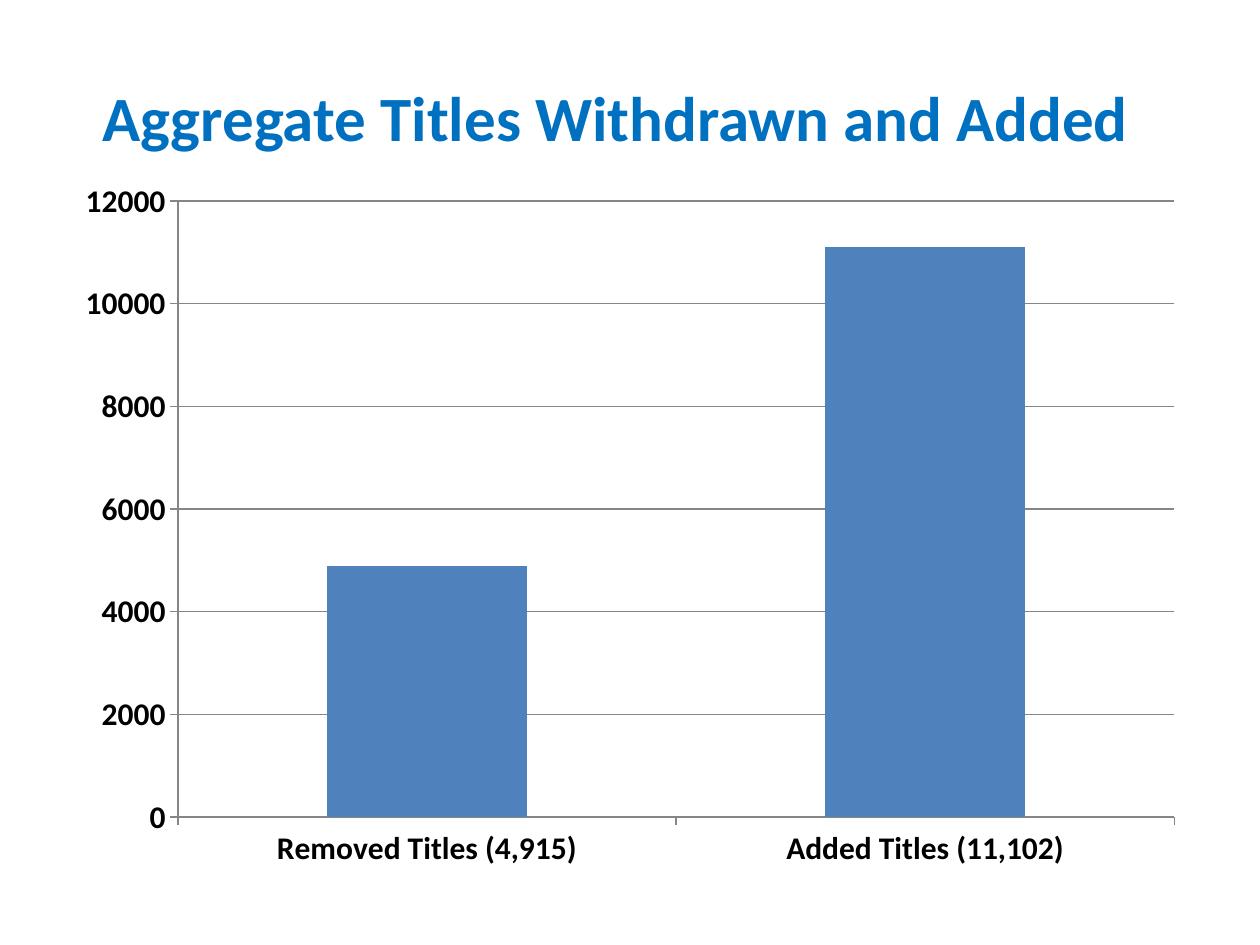
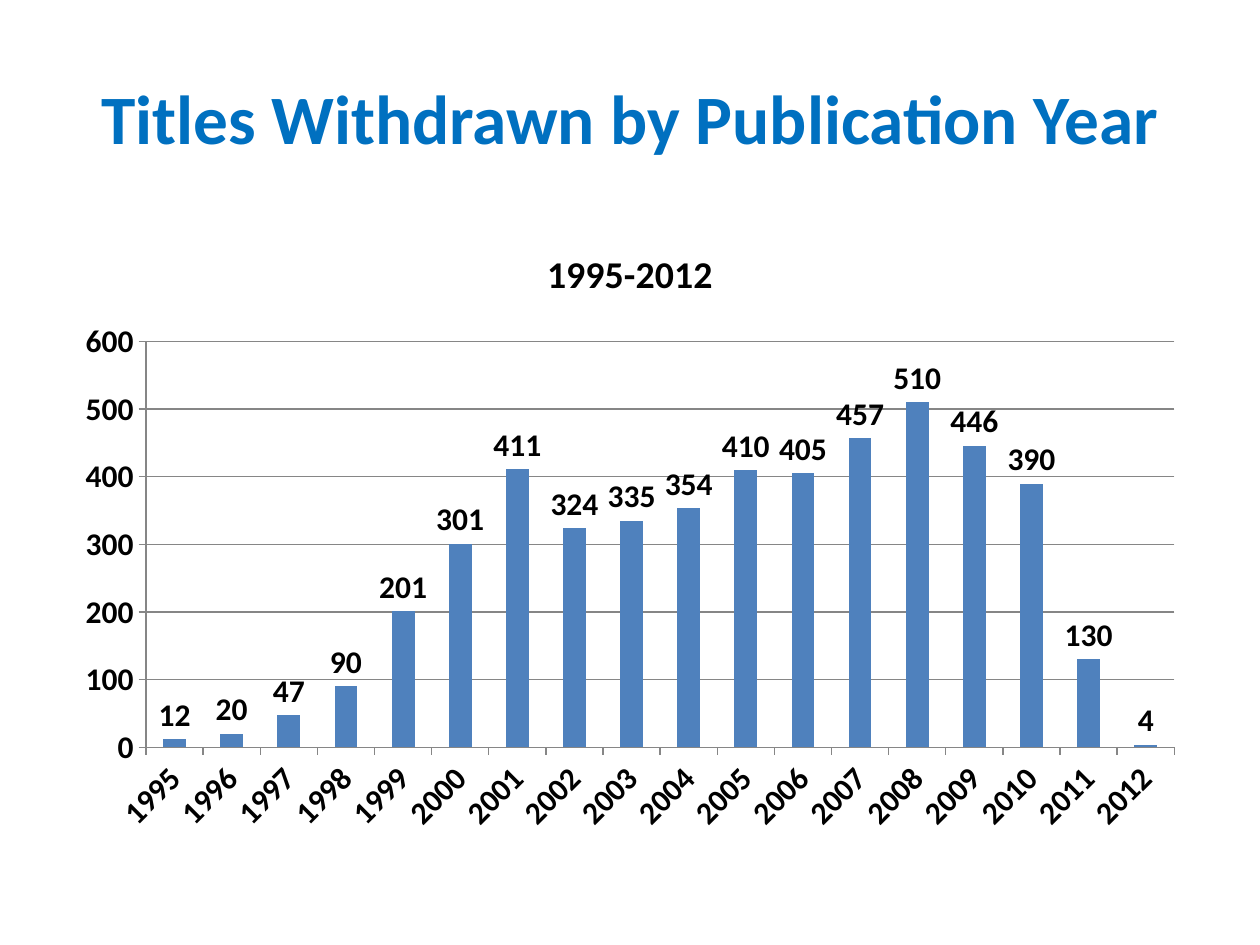
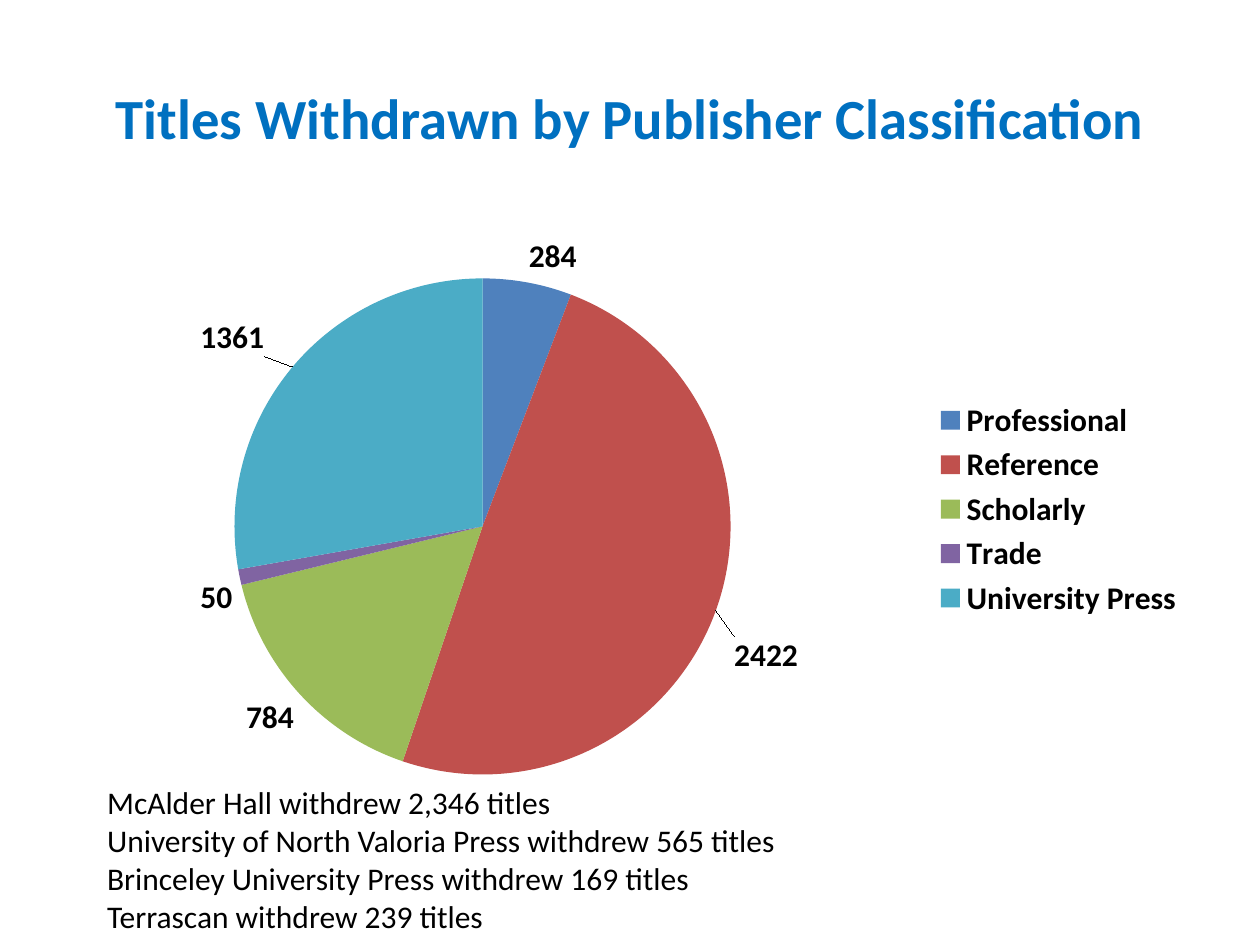
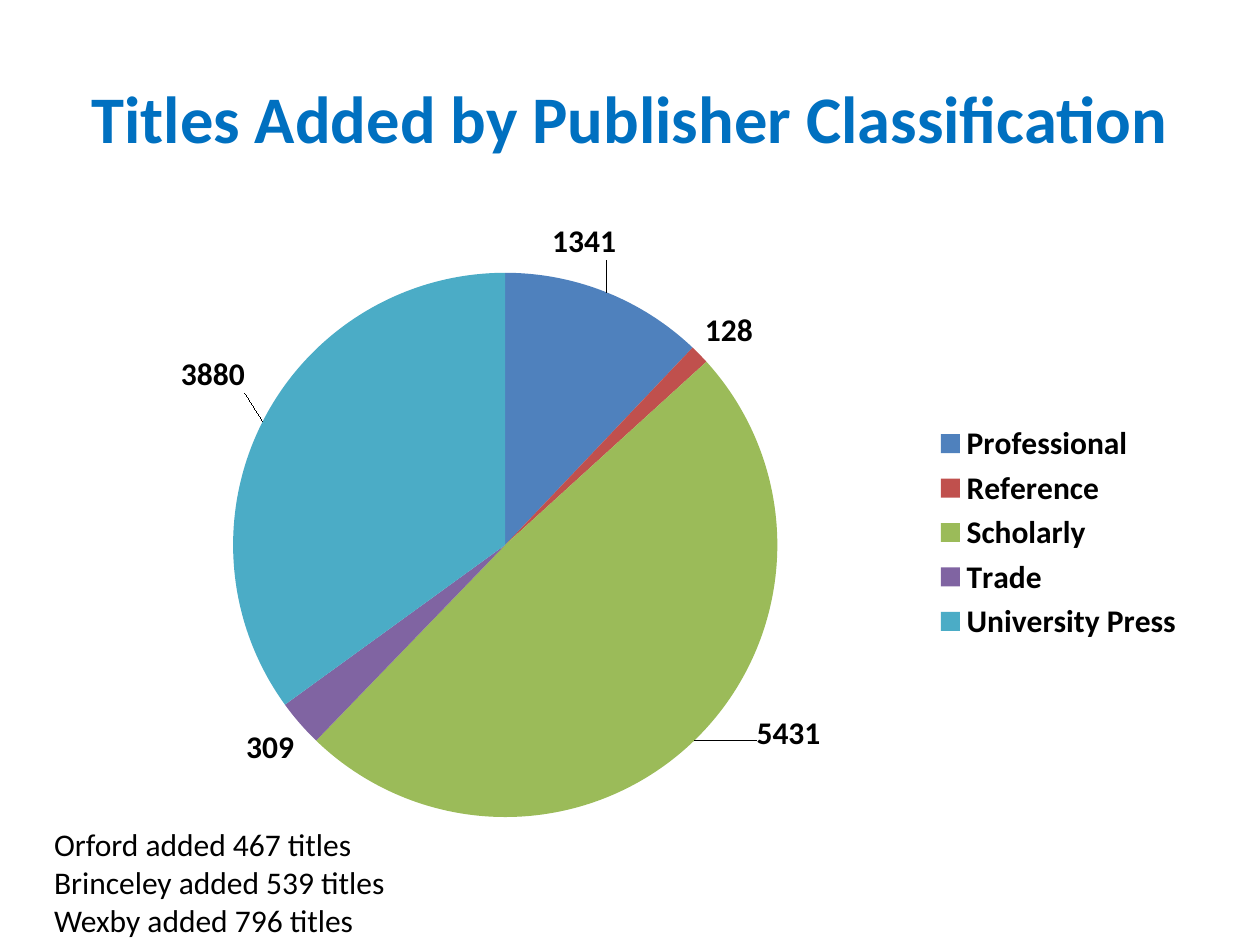
import pptx
import pptx.chart.data
import pptx.dml.color
import pptx.enum.chart
import pptx.enum.text
import pptx.oxml
import pptx.oxml.ns
import pptx.util
from pptx.util import Cm

FONT = "Calibri"
BLACK, TITLE_BLUE, AXIS_GRAY = "000000", "0070C0", "868686"
ACCENTS = ["4F81BD", "C0504D", "9BBB59", "8064A2", "4BACC6"]
MARGIN, CONTENT_WIDTH = 1.27, 22.86
BODY_SIZE = 18

CLASSIFICATIONS = ["Professional", "Reference", "Scholarly", "Trade", "University Press"]
YEARS = [str(year) for year in range(1995, 2013)]
WITHDRAWN_BY_YEAR = [12, 20, 47, 90, 201, 301, 411, 324, 335, 354,
                     410, 405, 457, 510, 446, 390, 130, 4]

CHART_TYPES = pptx.enum.chart.XL_CHART_TYPE
LABEL_POSITIONS = pptx.enum.chart.XL_LABEL_POSITION


def rgb(color):
    return pptx.dml.color.RGBColor.from_string(color)


def style_font(font, size=BODY_SIZE, color=BLACK, bold=True):
    font.name = FONT
    font.size = pptx.util.Pt(size)
    font.bold = bold
    font.color.rgb = rgb(color)


# Text
def add_text(slide, box, lines, size=BODY_SIZE, color=BLACK, bold=False):
    shape = slide.shapes.add_textbox(*(Cm(length) for length in box))
    frame = shape.text_frame
    frame.word_wrap = True
    for index, line in enumerate(lines):
        paragraph = frame.paragraphs[0] if index == 0 else frame.add_paragraph()
        run = paragraph.add_run()
        run.text = line
        style_font(run.font, size, color, bold)
    return frame


def add_title(slide, text, size, right_inset=0.25):
    box = (MARGIN, 0.76, CONTENT_WIDTH, 3.18)
    frame = add_text(slide, box, [text], size, TITLE_BLUE, True)
    frame.vertical_anchor = pptx.enum.text.MSO_ANCHOR.MIDDLE
    frame.margin_right = Cm(right_inset)
    frame.paragraphs[0].alignment = pptx.enum.text.PP_ALIGN.CENTER


# Charts
def add_chart(slide, chart_type, top, height, categories, values):
    data = pptx.chart.data.CategoryChartData()
    data.categories = categories
    data.add_series("Series 1", values)
    chart = slide.shapes.add_chart(
        chart_type, Cm(MARGIN), Cm(top), Cm(CONTENT_WIDTH), Cm(height), data).chart
    style_font(chart.font, bold=False)
    chart.has_title = False
    chart.has_legend = False
    return chart


def show_values(series, position):
    labels = series.data_labels
    labels.show_value = True
    labels.position = position
    style_font(labels.font)


def style_line(line):
    line.color.rgb = rgb(AXIS_GRAY)
    line.width = pptx.util.Pt(0.75)


def add_column_chart(slide, chart_type, top, height, categories, values):
    chart = add_chart(slide, chart_type, top, height, categories, values)
    plot = chart.plots[0]
    plot.gap_width = 150
    plot.vary_by_categories = False
    fill = plot.series[0].format.fill
    fill.solid()
    fill.fore_color.rgb = rgb(ACCENTS[0])
    for axis in (chart.category_axis, chart.value_axis):
        style_font(axis.tick_labels.font)
        axis.major_tick_mark = pptx.enum.chart.XL_TICK_MARK.OUTSIDE
        style_line(axis.format.line)
    chart.value_axis.has_major_gridlines = True
    style_line(chart.value_axis.major_gridlines.format.line)
    return chart


def make_layout(x, y, width=None, height=None):
    """Manual layout in fractions of the chart; without a size it is an offset."""
    settings = [("x", x), ("y", y)]
    if width is not None:
        settings = [("layoutTarget", "inner"), ("xMode", "edge"), ("yMode", "edge"),
                    *settings, ("w", width), ("h", height)]
    items = "".join(f'<c:{name} val="{value}"/>' for name, value in settings)
    return pptx.oxml.parse_xml(
        f'<c:layout {pptx.oxml.ns.nsdecls("c")}><c:manualLayout>{items}'
        '</c:manualLayout></c:layout>')


def add_pie_chart(slide, top, height, values, plot_box, label_offsets):
    chart = add_chart(slide, CHART_TYPES.PIE, top, height, CLASSIFICATIONS, values)
    chart.has_legend = True
    chart.legend.position = pptx.enum.chart.XL_LEGEND_POSITION.RIGHT
    chart.legend.include_in_layout = False
    style_font(chart.legend.font)

    plot = chart.plots[0]
    plot.vary_by_categories = True
    series = plot.series[0]
    for index, color in enumerate(ACCENTS):
        fill = series.points[index].format.fill
        fill.solid()
        fill.fore_color.rgb = rgb(color)

    # Plot position and shifted labels
    plot_area = chart.element.find(".//" + pptx.oxml.ns.qn("c:plotArea"))
    for layout in plot_area.findall(pptx.oxml.ns.qn("c:layout")):
        plot_area.remove(layout)
    plot_area.insert(0, make_layout(*plot_box))
    show_values(series, LABEL_POSITIONS.OUTSIDE_END)
    for index, offset in label_offsets.items():
        label = series.points[index].data_label
        label.position = LABEL_POSITIONS.BEST_FIT
        style_font(label.font)
    for label in series.data_labels._element.findall(pptx.oxml.ns.qn("c:dLbl")):
        index = label.find(pptx.oxml.ns.qn("c:idx"))
        index.addnext(make_layout(*label_offsets[int(index.get("val"))]))


def main():
    presentation = pptx.Presentation()
    presentation.slide_width = Cm(25.4)
    presentation.slide_height = Cm(19.05)
    blank = presentation.slide_layouts[6]

    # Totals
    slide = presentation.slides.add_slide(blank)
    add_title(slide, "Aggregate Titles Withdrawn and Added", 36, right_inset=0.83)
    chart = add_column_chart(slide, CHART_TYPES.COLUMN_STACKED, 3.38, 14.4,
                             ["Removed Titles (4,915)", "Added Titles (11,102)"],
                             [4900, 11100])
    chart.plots[0].overlap = 100

    # Withdrawals by year
    slide = presentation.slides.add_slide(blank)
    add_title(slide, "Titles Withdrawn by Publication Year", 39.6)
    chart = add_column_chart(slide, CHART_TYPES.COLUMN_CLUSTERED, 4.45, 12.57,
                             YEARS, WITHDRAWN_BY_YEAR)
    show_values(chart.plots[0].series[0], LABEL_POSITIONS.OUTSIDE_END)
    chart.has_title = True
    run = chart.chart_title.text_frame.paragraphs[0].add_run()
    run.text = "1995-2012"
    style_font(run.font, 21.6)

    # Withdrawals by publisher
    slide = presentation.slides.add_slide(blank)
    add_title(slide, "Titles Withdrawn by Publisher Classification", 32.4)
    add_pie_chart(slide, 4.45, 11.63, [284, 2422, 784, 50, 1361],
                  (0.15, 0.1, 0.44, 0.86), {1: (0.01, 0.04), 4: (-0.02, -0.01)})
    add_text(slide, (1.91, 15.67, 21.79, 3.38), [
        "McAlder Hall withdrew 2,346 titles",
        "University of North Valoria Press withdrew 565 titles",
        "Brinceley University Press withdrew 169 titles",
        "Terrascan withdrew 239 titles",
    ])

    # Additions by publisher
    slide = presentation.slides.add_slide(blank)
    add_title(slide, "Titles Added by Publisher Classification", 38)
    add_pie_chart(slide, 4.45, 12.57, [1341, 128, 5431, 309, 3880],
                  (0.15, 0.08, 0.48, 0.88),
                  {0: (-0.05, -0.04), 2: (0.05, -0.05), 4: (-0.01, -0.04)})
    add_text(slide, (0.84, 16.51, 22.02, 2.57), [
        "Orford added 467 titles",
        "Brinceley added 539 titles",
        "Wexby added 796 titles",
    ])

    presentation.save("out.pptx")


if __name__ == "__main__":
    main()
